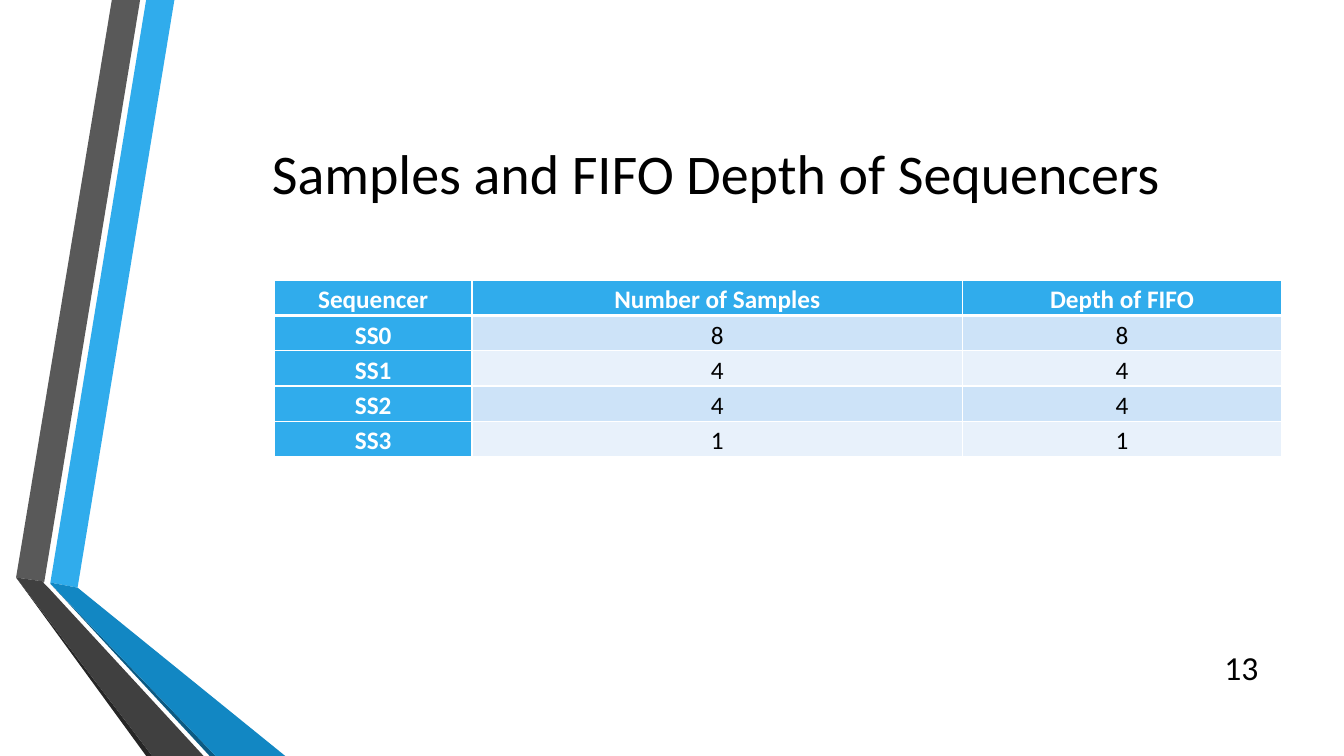
import pptx
import pptx.dml.color
import pptx.enum.text
import pptx.oxml
import pptx.oxml.ns
import pptx.util

Inches = pptx.util.Inches
Pt = pptx.util.Pt
ALIGN = pptx.enum.text.PP_ALIGN
MIDDLE = pptx.enum.text.MSO_ANCHOR.MIDDLE

COLORS = {
    "blue": "30ACEC",
    "blue_shade": "1287C3",
    "blue_edge": "0C5A82",
    "gray": "595959",
    "gray_shade": "404040",
    "gray_edge": "262626",
    "band_dark": "CDE3F8",
    "band_light": "E8F1FB",
    "white": "FFFFFF",
    "black": "000000",
}
FONT = "Calibri"

RIBBONS = [
    ("blue", [(0.5, 5.78), (0.77, 5.83), (1.73, 0), (1.45, 0)]),
    ("gray", [(1.39, 0), (1.11, 0), (0.16, 5.73), (0.44, 5.77)]),
    ("gray_edge", [(0.16, 5.73), (1.45, 7.5), (1.51, 7.5)]),
    ("blue_edge", [(0.5, 5.79), (2.08, 7.5), (2.14, 7.5)]),
    ("blue_shade", [(0.5, 5.79), (2.14, 7.5), (2.83, 7.5), (0.77, 5.83), (0.5, 5.78)]),
    ("gray_shade", [(2.02, 7.5), (0.48, 5.83), (0.43, 5.78), (0.44, 5.77),
                    (0.16, 5.73), (1.51, 7.5)]),
]

SEQUENCERS = [
    ("Sequencer", "Number of Samples", "Depth of FIFO"),
    ("SS0", "8", "8"),
    ("SS1", "4", "4"),
    ("SS2", "4", "4"),
    ("SS3", "1", "1"),
]
COLUMN_SHARES = (1.96, 4.86, 3.16)


def rgb(color):
    return pptx.dml.color.RGBColor.from_string(COLORS[color])


def style_paragraph(paragraph, size, color, align, bold=False):
    paragraph.alignment = align
    paragraph.font.name = FONT
    paragraph.font.size = Pt(size)
    paragraph.font.bold = bold
    paragraph.font.color.rgb = rgb(color)


def add_ribbons(slide, left, top):
    for color, corners in RIBBONS:
        points = [(Inches(left + x), Inches(top + y)) for x, y in corners]
        outline = slide.shapes.build_freeform(*points[0], scale=1.0)
        outline.add_line_segments(points[1:], close=True)
        ribbon = outline.convert_to_shape()
        ribbon.shadow.inherit = False
        ribbon.fill.solid()
        ribbon.fill.fore_color.rgb = rgb(color)
        ribbon.line.fill.background()


def add_label(slide, box, text, size, align):
    label = slide.shapes.add_textbox(*map(Inches, box)).text_frame
    label.word_wrap = True
    label.vertical_anchor = MIDDLE
    label.text = text
    style_paragraph(label.paragraphs[0], size, "black", align)


def set_borders(cell, bottom_width):
    properties = cell._tc.get_or_add_tcPr()
    widths = {"lnL": 1, "lnR": 1, "lnT": 1, "lnB": bottom_width}
    for position, (side, width) in enumerate(widths.items()):
        border = pptx.oxml.parse_xml(
            f'<a:{side} {pptx.oxml.ns.nsdecls("a")} w="{Pt(width)}"><a:solidFill>'
            f'<a:srgbClr val="{COLORS["white"]}"/></a:solidFill></a:{side}>')
        properties.insert(position, border)


def add_sequencer_table(slide, left, top, width, height):
    table = slide.shapes.add_table(
        len(SEQUENCERS), len(COLUMN_SHARES),
        Inches(left), Inches(top), Inches(width), Inches(height)).table
    for column, share in zip(table.columns, COLUMN_SHARES):
        column.width = Inches(width * share / sum(COLUMN_SHARES))
    for r, row in enumerate(SEQUENCERS):
        for c, text in enumerate(row):
            cell = table.cell(r, c)
            heading = r == 0 or c == 0
            band = "band_dark" if r % 2 else "band_light"
            cell.text = text
            cell.margin_left = cell.margin_right = Inches(0.07)
            cell.margin_top = cell.margin_bottom = 0
            cell.fill.solid()
            cell.fill.fore_color.rgb = rgb("blue" if heading else band)
            paragraph = cell.text_frame.paragraphs[0]
            paragraph.line_spacing = 1.15
            style_paragraph(paragraph, 18, "white" if heading else "black",
                            ALIGN.CENTER, heading)
            set_borders(cell, 3 if r == 0 else 1)


def main():
    deck = pptx.Presentation()
    deck.slide_width = Inches(13.33)
    deck.slide_height = Inches(7.5)
    slide = deck.slides.add_slide(deck.slide_layouts[6])
    add_ribbons(slide, 0, 0)
    add_label(slide, (1.62, 0.75, 10.96, 1.92),
              "Samples and FIFO Depth of Sequencers", 40, ALIGN.CENTER)
    add_label(slide, (11.98, 6.42, 0.6, 0.4), "13", 24, ALIGN.RIGHT)
    add_sequencer_table(slide, 2.72, 2.78, 9.99, 1.75)
    deck.save("out.pptx")


if __name__ == "__main__":
    main()
